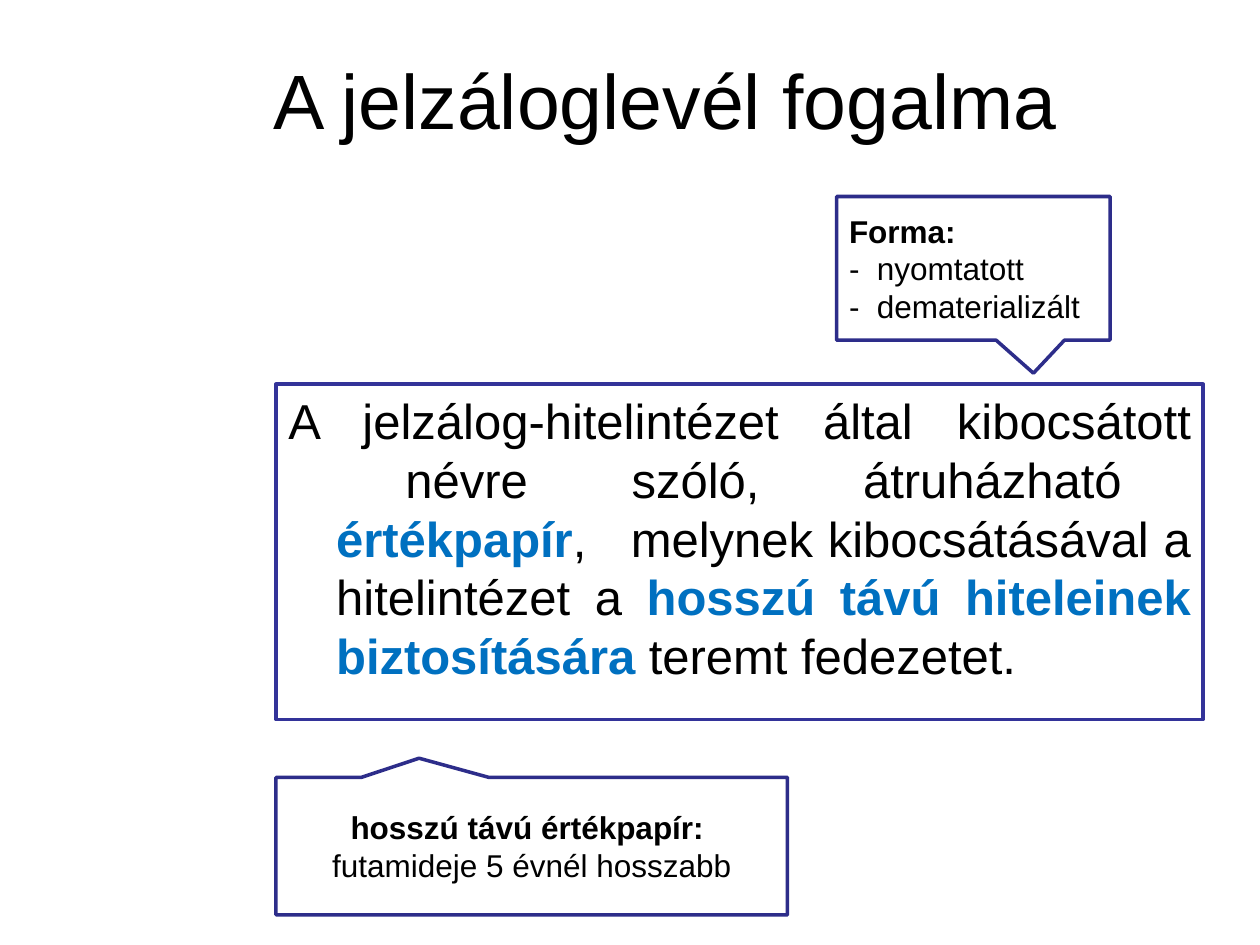
"""Build a slide that defines the mortgage bond, with two callouts."""
from pptx import Presentation
from pptx.dml.color import RGBColor
from pptx.enum.shapes import MSO_SHAPE
from pptx.enum.text import MSO_ANCHOR, PP_ALIGN
from pptx.util import Inches, Pt

CALLOUT = MSO_SHAPE.RECTANGULAR_CALLOUT
MIDDLE = MSO_ANCHOR.MIDDLE
LEFT, CENTER, JUSTIFY = PP_ALIGN.LEFT, PP_ALIGN.CENTER, PP_ALIGN.JUSTIFY
BLACK, WHITE, BLUE = "000000", "FFFFFF", "0070C0"
FRAME, NAVY = "333399", "2D2D8A"


def color(value):
    return RGBColor.from_string(value)


def add_span(para, text, size=18, bold=False, fill=BLACK):
    span = para.add_run()
    span.text = text
    span.font.name = "Arial"
    span.font.size = Pt(size)
    span.font.bold = bold
    span.font.color.rgb = color(fill)


deck = Presentation()
deck.slide_width, deck.slide_height = Inches(10), Inches(7.5)
page = deck.slides.add_slide(deck.slide_layouts[5])

title = page.shapes.title
title.left, title.top = Inches(0.78), Inches(0.16)
title.width, title.height = Inches(9), Inches(1.25)
title.text_frame.vertical_anchor = MIDDLE
title_para = title.text_frame.paragraphs[0]
title_para.alignment = CENTER
add_span(title_para, "A jelzáloglevél fogalma", size=44)

definition = page.shapes.add_textbox(Inches(2.19), Inches(3.05), Inches(7.36), Inches(2.66))
definition.line.color.rgb = color(FRAME)
definition.line.width = Pt(2)
definition.text_frame.word_wrap = True
definition_para = definition.text_frame.paragraphs[0]
definition_para.alignment = JUSTIFY
indent = definition_para._p.get_or_add_pPr()
indent.set("marL", str(Inches(0.38)))
indent.set("indent", str(Inches(-0.38)))
definition_spans = [
    ("A   jelzálog-hitelintézet   által   kibocsátott   névre   szóló,   átruházható   ", False),
    ("értékpapír", True),
    (",   melynek kibocsátásával a hitelintézet a ", False),
    ("hosszú távú hiteleinek biztosítására ", True),
    ("teremt fedezetet.", False),
]
for text, key_term in definition_spans:
    add_span(definition_para, text, size=28, bold=key_term, fill=BLUE if key_term else BLACK)

callouts = [
    ((2.19, 6.17, 4.06, 1.09), (-0.22, -0.64), CENTER,
     ["hosszú távú értékpapír: ", "futamideje 5 évnél hosszabb"]),
    ((6.64, 1.56, 2.17, 1.14), (0.22, 0.73), LEFT,
     ["Forma:", "-  nyomtatott", "-  dematerializált"]),
]
for place, tip, alignment, lines in callouts:
    callout = page.shapes.add_shape(CALLOUT, *map(Inches, place))
    callout.shadow.inherit = False
    callout.adjustments[0], callout.adjustments[1] = tip
    callout.fill.solid()
    callout.fill.fore_color.rgb = color(WHITE)
    callout.line.color.rgb = color(NAVY)
    callout.line.width = Pt(2)
    frame = callout.text_frame
    frame.word_wrap = True
    frame.vertical_anchor = MIDDLE
    for number, text in enumerate(lines):
        para = frame.add_paragraph() if number else frame.paragraphs[0]
        para.alignment = alignment
        add_span(para, text, bold=number == 0)

deck.save("out.pptx")
